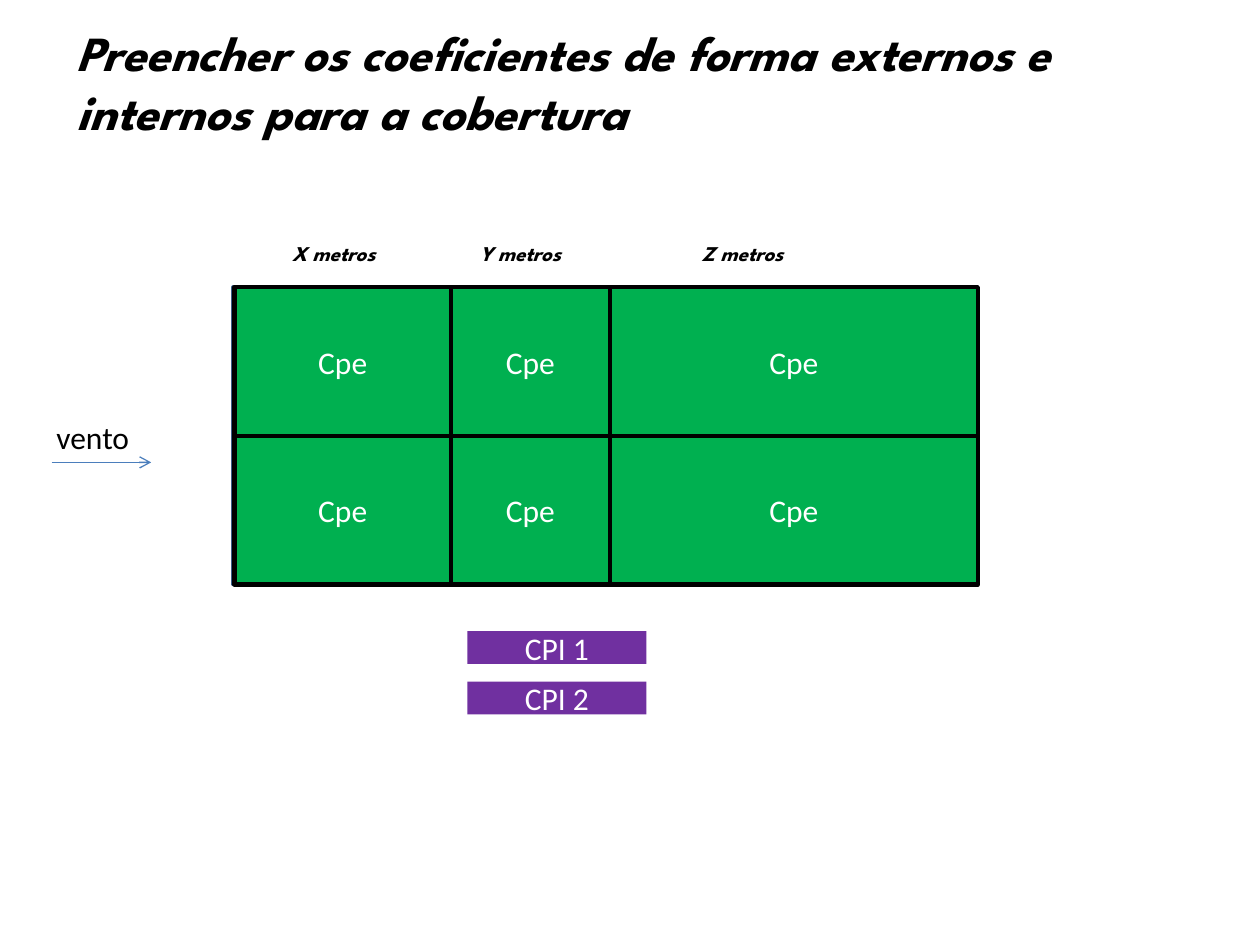
from dataclasses import dataclass
from itertools import accumulate

from lxml import etree
from pptx import Presentation
from pptx import util as u
from pptx.dml import color
from pptx.enum import shapes, text
from pptx.oxml import ns


@dataclass(frozen=True)
class Theme:
    ink: str = "000000"
    white: str = "FFFFFF"
    roof: str = "00B050"
    internal: str = "7030A0"
    outline: str = "3A5F8C"
    wind: str = "4B7EBC"
    body_font: str = "Calibri"
    title_font: str = "League Spartan"
    title_size: int = 28
    body_size: int = 18
    label_size: int = 12


THEME = Theme()


def rgb(value):
    return color.RGBColor.from_string(value)


def write(shape, words, size, ink, font, strong=False):
    shape.text_frame.text = words
    for span in shape.text_frame.paragraphs[0].runs:
        span.font.size = u.Pt(size)
        span.font.name = font
        span.font.color.rgb = rgb(ink)
        span.font.bold = span.font.italic = strong


def add_text(page, box, words, size, font, strong=False):
    label = page.shapes.add_textbox(*map(u.Inches, box))
    label.text_frame.word_wrap = True
    write(label, words, size, THEME.ink, font, strong)


def add_block(page, box, words="", fill=None, line=None, width=0):
    block = page.shapes.add_shape(shapes.MSO_SHAPE.RECTANGLE, *map(u.Inches, box))
    block.shadow.inherit = False
    if fill:
        block.fill.solid()
        block.fill.fore_color.rgb = rgb(fill)
    else:
        block.fill.background()
    if line:
        block.line.color.rgb = rgb(line)
        block.line.width = u.Pt(width)
    else:
        block.line.fill.background()
    if words:
        write(block, words, THEME.body_size, THEME.white, THEME.body_font)
        block.text_frame.vertical_anchor = text.MSO_ANCHOR.MIDDLE
        block.text_frame.paragraphs[0].alignment = text.PP_ALIGN.CENTER


def add_title(page, box):
    add_text(page, box,
             "Preencher os coeficientes de forma externos e internos para a cobertura",
             THEME.title_size, THEME.title_font, strong=True)


def add_wind(page, box):
    left, top, width, height = box
    add_text(page, (left - 0.06, top, 0.94, height), "vento",
             THEME.body_size, THEME.body_font)
    start, end, level = map(u.Inches, (left, left + width, top + height))
    arrow = page.shapes.add_connector(shapes.MSO_CONNECTOR.STRAIGHT,
                                      start, level, end, level)
    arrow.line.color.rgb = rgb(THEME.wind)
    arrow.line.width = u.Pt(0.75)
    etree.SubElement(arrow.line._get_or_add_ln(), ns.qn("a:tailEnd"), type="arrow")
    etree.SubElement(arrow._element.spPr, ns.qn("a:effectLst"))


def add_roof(page, box):
    left, top, width, height = box
    add_block(page, box, line=THEME.outline, width=2)
    zone_widths = (1.72, 1.26, 2.92)
    zone_lefts = accumulate(zone_widths[:-1], initial=left + 0.01)
    row_height = height / 2
    for zone_left, zone_width in zip(zone_lefts, zone_widths):
        for row in range(2):
            add_block(page, (zone_left, top + row * row_height, zone_width, row_height),
                      "Cpe", THEME.roof, THEME.ink, 2.5)


def add_zone_labels(page, top):
    for name, left in (("X", 2.22), ("Y", 3.71), ("Z", 5.47)):
        add_text(page, (left, top, 0.98, 0.3), f"{name} metros",
                 THEME.label_size, THEME.title_font, strong=True)


def add_internal_coefficients(page, box):
    left, top, width, height = box
    bar_height = 0.26
    for index in range(2):
        bar_top = top + index * (height - bar_height)
        add_block(page, (left, bar_top, width, bar_height),
                  f"CPI {index + 1}", THEME.internal)


def main():
    deck = Presentation()
    deck.slide_width, deck.slide_height = u.Inches(10), u.Inches(7.5)
    page = deck.slides.add_slide(deck.slide_layouts[6])
    add_title(page, (0.51, 0.13, 8.11, 1.04))
    add_wind(page, (0.41, 3.27, 0.79, 0.4))
    add_zone_labels(page, 1.86)
    add_roof(page, (1.85, 2.28, 5.91, 2.36))
    add_internal_coefficients(page, (3.71, 5.01, 1.42, 0.66))
    deck.save("out.pptx")


if __name__ == "__main__":
    main()
